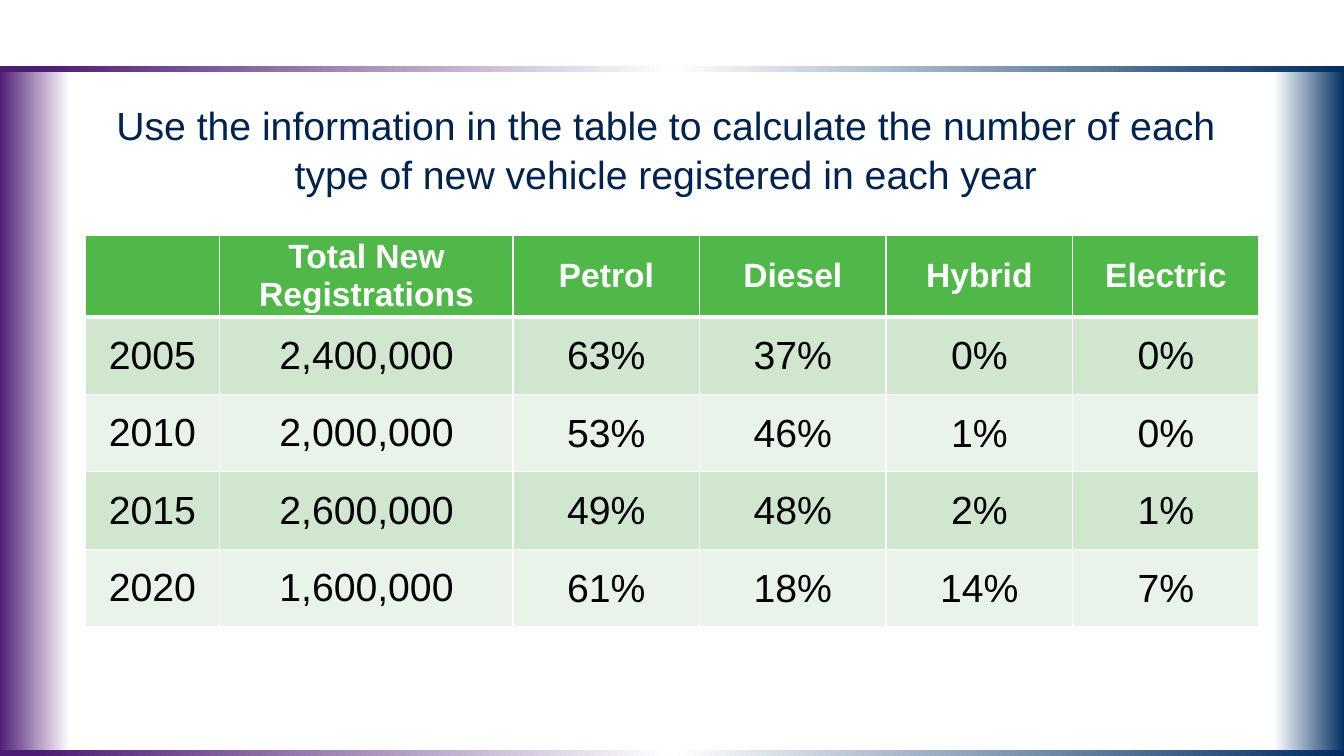
from lxml import etree
from pptx import Presentation
from pptx import util as u
from pptx.dml.color import RGBColor
from pptx.enum import shapes, text
from pptx.oxml.ns import qn

PURPLE, NAVY, WHITE = "4D1C74", "002D61", "FFFFFF"
HEADINGS = ["", "Total New Registrations", "Petrol", "Diesel", "Hybrid", "Electric"]
REGISTRATIONS = [
    ["2005", "2,400,000", "63%", "37%", "0%", "0%"],
    ["2010", "2,000,000", "53%", "46%", "1%", "0%"],
    ["2015", "2,600,000", "49%", "48%", "2%", "1%"],
    ["2020", "1,600,000", "61%", "18%", "14%", "7%"],
]
COLUMN_WIDTHS = [3.4, 7.39] + [4.7] * 4


def colour(value):
    return RGBColor.from_string(value)


def style_text(para, size, value, bold=False):
    para.alignment = text.PP_ALIGN.CENTER
    for span in para.runs:
        span.font.name = "Arial"
        span.font.size = u.Pt(size)
        span.font.bold = bold
        span.font.color.rgb = colour(value)


def add_gradient_bar(page, left, top, width, height, stops, rotation=0):
    bar = page.shapes.add_shape(
        shapes.MSO_SHAPE.RECTANGLE, u.Cm(left), u.Cm(top), u.Cm(width), u.Cm(height))
    bar.shadow.inherit = False
    bar.line.fill.background()
    bar.rotation = rotation
    bar.fill.gradient()
    bar.fill.gradient_angle = 0
    stop_list = next(bar._element.iter(qn("a:gsLst")))
    for stop in list(stop_list):
        stop_list.remove(stop)
    for position, value in stops:
        stop = etree.SubElement(stop_list, qn("a:gs"), pos=str(position * 1000))
        etree.SubElement(stop, qn("a:srgbClr"), val=value)


def add_frame(page, left, top, width, height):
    side, edge = 1.8, 0.15
    add_gradient_bar(page, left, top, side, height, [(0, PURPLE), (100, WHITE)])
    add_gradient_bar(page, left + width - side, top, side, height,
                     [(0, WHITE), (100, NAVY)])
    for bar_top in (top + height - edge, top - 0.03):
        add_gradient_bar(page, left, bar_top, width, edge,
                         [(0, NAVY), (50, WHITE), (97, PURPLE)], rotation=180)


def add_task(page, left, top, width, height):
    box = page.shapes.add_textbox(u.Cm(left), u.Cm(top), u.Cm(width), u.Cm(height))
    box.text_frame.word_wrap = True
    para = box.text_frame.paragraphs[0]
    para.text = ("Use the information in the table to calculate the number of each "
                 "type of new vehicle registered in each year")
    para.line_spacing = 1.05
    style_text(para, 28, "002350")


def set_borders(cell, bottom):
    properties = cell._tc.get_or_add_tcPr()
    widths = {"a:lnL": 1, "a:lnR": 1, "a:lnT": 1, "a:lnB": bottom}
    for index, (tag, width) in enumerate(widths.items()):
        line = etree.Element(qn(tag), w=str(u.Pt(width)))
        fill = etree.SubElement(line, qn("a:solidFill"))
        etree.SubElement(fill, qn("a:srgbClr"), val=WHITE)
        properties.insert(index, line)


def add_registrations(page, left, top, width, height):
    rows = [HEADINGS] + REGISTRATIONS
    header_height = 2
    table = page.shapes.add_table(
        len(rows), len(HEADINGS), u.Cm(left), u.Cm(top), u.Cm(width), u.Cm(height)).table
    for column, column_width in zip(table.columns, COLUMN_WIDTHS):
        column.width = u.Cm(column_width)
    for r, values in enumerate(rows):
        header = r == 0
        row_height = header_height if header else (height - header_height) / len(REGISTRATIONS)
        table.rows[r].height = u.Cm(row_height)
        band = "50B848" if header else ("E9F3E9", "D0E6CF")[r % 2]
        for c, value in enumerate(values):
            cell = table.cell(r, c)
            cell.text = value
            cell.vertical_anchor = text.MSO_ANCHOR.MIDDLE
            if header:
                cell.margin_top = cell.margin_bottom = u.Cm(0.08)
            elif c > 1:
                cell.margin_left = cell.margin_right = cell.margin_top = u.Cm(0.03)
                cell.margin_bottom = 0
            cell.fill.solid()
            cell.fill.fore_color.rgb = colour(band)
            set_borders(cell, 3 if header else 1)
            style_text(cell.text_frame.paragraphs[0], 24 if header else 28,
                       WHITE if header else "000000", header)


def main():
    deck = Presentation()
    deck.slide_width, deck.slide_height = u.Cm(33.87), u.Cm(19.05)
    page = deck.slides.add_slide(deck.slide_layouts[6])
    add_frame(page, -0.03, 1.7, 33.93, 17.35)
    add_registrations(page, 2.14, 5.93, sum(COLUMN_WIDTHS), 9.82)
    add_task(page, 1.85, 2.36, 29.85, 1.88)
    deck.save("out.pptx")


if __name__ == "__main__":
    main()
